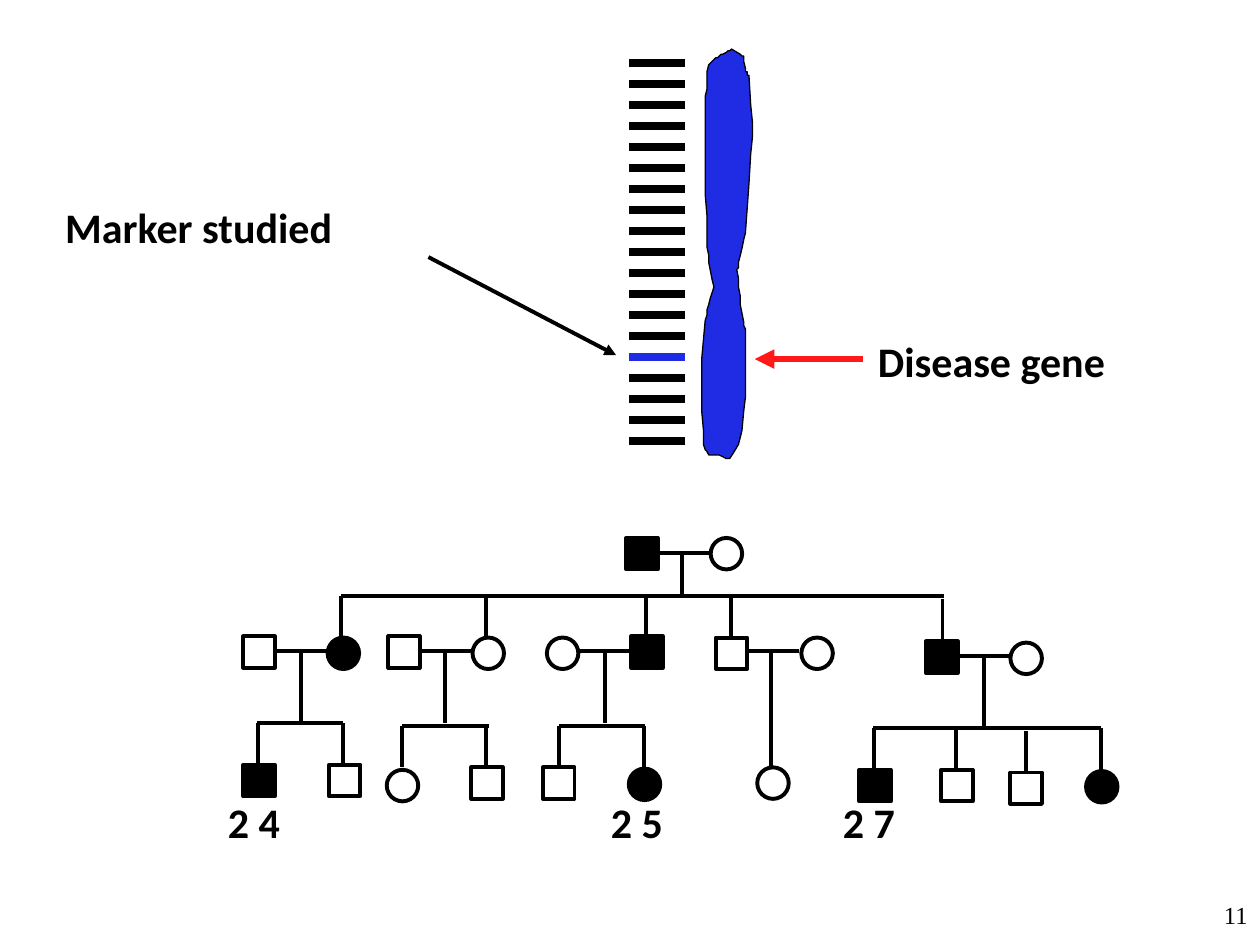
from lxml import etree
from pptx import Presentation
from pptx import util as u
from pptx.dml.color import RGBColor
from pptx.enum import shapes, text
from pptx.oxml import ns

BLACK = RGBColor(0, 0, 0)
BLUE = RGBColor(0x1F, 0x2C, 0xE4)
RED = RGBColor(0xFF, 0x19, 0x19)
RECT = shapes.MSO_SHAPE.RECTANGLE
OVAL = shapes.MSO_SHAPE.OVAL


class Pen:
    """Draws on one slide; all lengths are points."""

    font, size, width, side = "Calibri", 24, 2.25, 18

    def __init__(self, slide):
        self.items = slide.shapes

    def line(self, x1, y1, x2, y2, color=BLACK, width=width, arrow=False):
        line = self.items.add_connector(
            shapes.MSO_CONNECTOR.STRAIGHT, *map(u.Pt, (x1, y1, x2, y2)))
        line.line.color.rgb = color
        line.line.width = u.Pt(width)
        props = line.element.spPr
        if arrow:
            etree.SubElement(props.find(ns.qn("a:ln")), ns.qn("a:tailEnd"), type="triangle")
        etree.SubElement(props, ns.qn("a:effectLst"))

    def paint(self, shape, fill, width):
        shape.shadow.inherit = False
        if fill is None:
            shape.fill.background()
        else:
            shape.fill.solid()
            shape.fill.fore_color.rgb = fill
        shape.line.color.rgb = BLACK
        shape.line.width = u.Pt(width)

    def person(self, kind, x, y, ill):
        box = map(u.Pt, (x, y, self.side, self.side))
        self.paint(self.items.add_shape(kind, *box), BLACK if ill else None, self.width)

    def curved(self, start, curves, fill, steps=6):
        """Outline of cubic curves, each given as two handles and an end."""
        points, last = [], start
        for curve in curves:
            ends = (last, *curve)
            for n in range(1, steps + 1):
                t = n / steps
                s = 1 - t
                parts = (s ** 3, 3 * s * s * t, 3 * s * t * t, t ** 3)
                points.append(tuple(sum(w * p[k] for w, p in zip(parts, ends)) for k in (0, 1)))
            last = curve[-1]
        form = self.items.build_freeform(*start, scale=u.Pt(1))
        form.add_line_segments(points, close=True)
        self.paint(form.convert_to_shape(), fill, 0.75)

    def label(self, words, x, y, w, h=36.7, font=font, size=size, bold=True,
              align=text.PP_ALIGN.LEFT, wrap=False):
        box = self.items.add_textbox(*map(u.Pt, (x, y, w, h)))
        frame = box.text_frame
        frame.text = words
        frame.word_wrap = wrap
        if not wrap:
            frame.auto_size = text.MSO_AUTO_SIZE.SHAPE_TO_FIT_TEXT
        para = frame.paragraphs[0]
        para.alignment = align
        face = para.runs[0].font
        face.name, face.size, face.bold = font, u.Pt(size), bold
        face.color.rgb = BLACK


# Chromosome outline: two handles and an end point per curve
START = (412.6, 260.6)
CURVES = [
    ((409.7, 259.9), (406.1, 261.4), (403.9, 258.5)),
    ((401.8, 255.6), (401.8, 245.5), (401.8, 245.5)),
    ((401, 222.5), (400.3, 206.6), (403.2, 182.9)),
    ((403.9, 176.4), (406.1, 170.6), (407.5, 164.2)),
    ((406.1, 154.8), (404.6, 146.2), (403.9, 136.8)),
    ((403.2, 108), (402.5, 90.7), (403.2, 59)),
    ((403.9, 52.6), (402.5, 38.2), (407.5, 33.8)),
    ((409.7, 32.4), (411.8, 31.7), (414.7, 30.2)),
    ((415.4, 29.5), (418.3, 28.1), (418.3, 28.1)),
    ((429.8, 36), (421.9, 27.4), (425.5, 38.9)),
    ((426.2, 41), (427, 41.8), (427.7, 43.2)),
    ((430.6, 85), (430.6, 64.1), (425.5, 133.2)),
    ((425.5, 140.4), (421.2, 154.1), (421.2, 154.1)),
    ((421.9, 164.9), (423.4, 173.5), (424.8, 183.6)),
    ((425.5, 185.8), (426.2, 190.1), (426.2, 190.1)),
    ((425.5, 217.4), (427, 221.8), (424.1, 246.2)),
    ((423.4, 252.7), (416.2, 267.8), (412.6, 260.6)),
]

# Pedigree lines: (y, [(left, right)]) and (top, bottom, [x])
BARS = [
    (316.1, [(375.8, 406.1)]),
    (340.6, [(195.1, 539.3)]),
    (372.2, [(157, 187.2), (239.8, 270), (330.5, 360.7), (427, 456.5)]),
    (375.1, [(547.2, 577.4)]),
    (413.3, [(146.9, 195.8)]),
    (414.7, [(229.7, 279.4), (319.7, 368.6)]),
    (416.2, [(499, 629.3)]),
]
DROPS = [
    (316.1, 340.6, [389.5]),
    (340.6, 364.3, [195.1, 277.9, 369.4, 417.6]),
    (342, 365.8, [538.6]),
    (372.2, 413.3, [172.1, 254.2, 345.6]),
    (372.2, 438.5, [440.6]),
    (375.1, 416.2, [562.3]),
    (413.3, 437, [147.6, 195.8]),
    (414.7, 438.5, [229.7, 277.9, 319.7, 367.9]),
    (416.2, 439.9, [499.7, 546.5, 629.3]),
    (417.6, 441.4, [586.1]),
]

# Family members by generation: (left, top, affected)
MEN = [
    (357.8, 307.4, True),
    (139, 363.6, False), (221.8, 363.6, False), (360.7, 363.6, True),
    (409, 364.3, False), (529.2, 366.5, True),
    (139, 437, True), (187.9, 437, False), (269.3, 438.5, False), (310.3, 438.5, False),
    (491, 439.9, True), (537.8, 439.9, False), (577.4, 441.4, False),
]
WOMEN = [
    (406.1, 307.4, False),
    (187.2, 364.3, True), (270, 364.3, False), (312.5, 364.3, False),
    (457.9, 364.3, False), (577.4, 367.2, False),
    (221, 439.9, False), (359.3, 439.2, True), (432.7, 438.5, False), (620.6, 440.6, True),
]


def main():
    deck = Presentation()
    deck.slide_width, deck.slide_height = u.Pt(720), u.Pt(540)
    pen = Pen(deck.slides.add_slide(deck.slide_layouts[6]))

    # Marker bands, with the studied one in blue
    for n in range(19):
        y = 36 + 12 * n
        pen.line(359.3, y, 391.7, y, BLUE if n == 14 else BLACK, 4.5)

    # Chromosome and its callouts
    pen.curved(START, CURVES, BLUE)
    pen.line(493.2, 205.2, 431.3, 205.2, RED, 3.75, arrow=True)
    pen.label("Disease gene", 494.6, 187.9, 145.4)
    pen.label("Marker studied", 30.2, 111.6, 168.5)
    pen.line(244.8, 146.9, 352.1, 203, arrow=True)

    # Pedigree
    for y, spans in BARS:
        for left, right in spans:
            pen.line(left, y, right, y)
    for top, base, spots in DROPS:
        for x in spots:
            pen.line(x, top, x, base)
    for kind, group in ((RECT, MEN), (OVAL, WOMEN)):
        for member in group:
            pen.person(kind, *member)

    # Marker types of affected grandchildren
    for words, x in (("2 4", 123.1), ("2 5", 342), ("2 7", 474.5)):
        pen.label(words, x, 451.4, 44.6)

    # Page number
    pen.label("11", 570.2, 510.5, 149.8, 30.2, "Times New Roman", 14, False,
              text.PP_ALIGN.RIGHT, True)

    deck.save("out.pptx")


if __name__ == "__main__":
    main()
